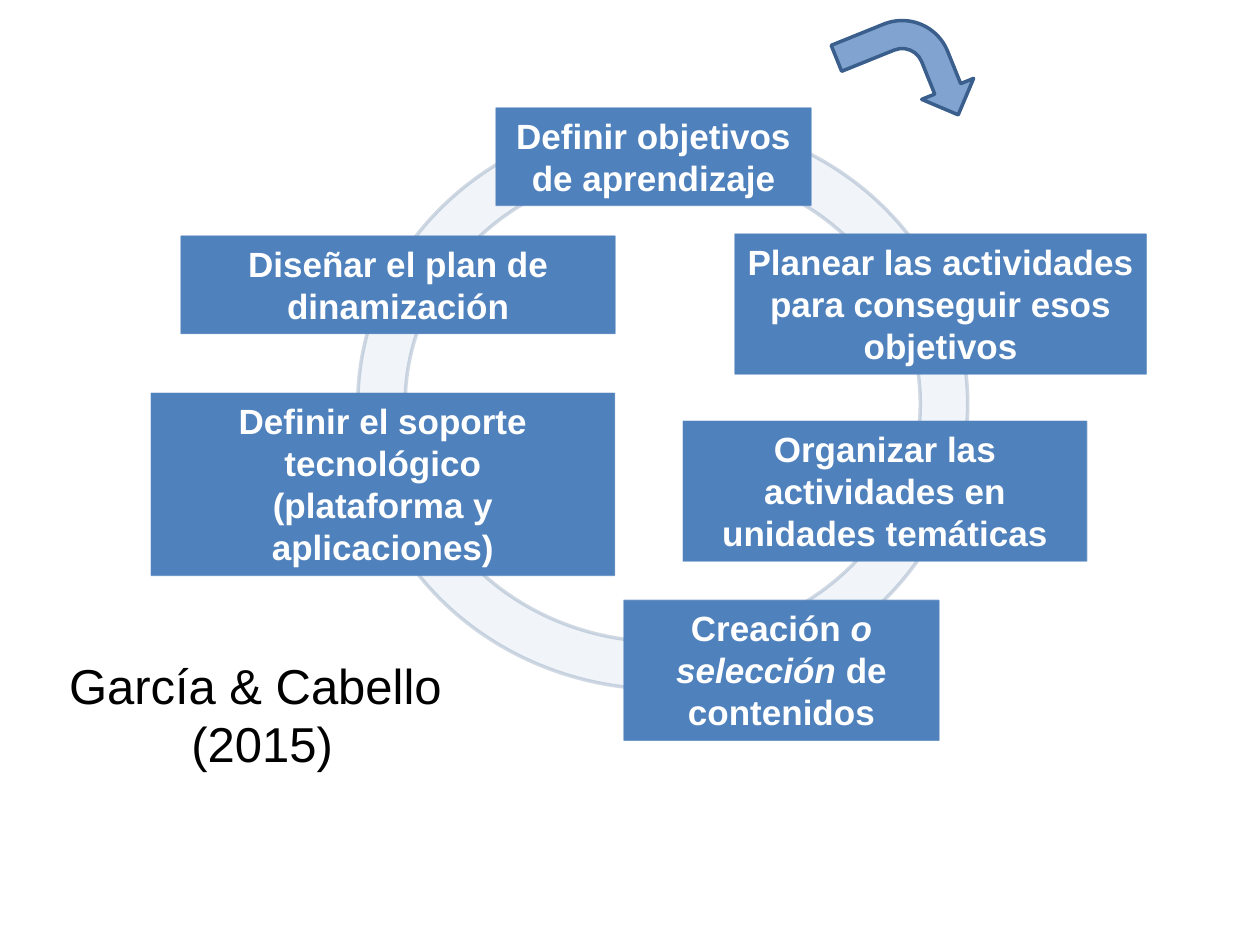
"""Build a slide showing the cycle of steps for designing a course."""
from lxml import etree
from pptx import Presentation
from pptx.dml import color
from pptx.enum import shapes, text
from pptx.oxml import ns
from pptx.util import Pt

BLUE = color.RGBColor(0x4F, 0x81, 0xBD)
NAVY = color.RGBColor(0x3A, 0x5F, 0x8C)
WHITE = color.RGBColor(0xFF, 0xFF, 0xFF)
BLACK = color.RGBColor(0, 0, 0)


def add_filled_shape(kind, bounds, outline, width, fill_alpha, line_alpha):
    shape = slide.shapes.add_shape(kind, *[Pt(length) for length in bounds])
    shape.shadow.inherit = False
    shape.fill.solid()
    shape.fill.fore_color.rgb = BLUE
    shape.line.color.rgb = outline
    shape.line.width = Pt(width)
    colours = shape._element.spPr.iter(ns.qn("a:srgbClr"))
    for colour, alpha in zip(list(colours), (fill_alpha, line_alpha)):
        if alpha < 100:
            etree.SubElement(colour, ns.qn("a:alpha")).set("val", str(alpha * 1000))
    return shape


def write_text(shape, paragraphs, size, colour, bold, wrap):
    frame = shape.text_frame
    frame.word_wrap = wrap
    frame.auto_size = text.MSO_AUTO_SIZE.SHAPE_TO_FIT_TEXT
    for index, runs in enumerate(paragraphs):
        paragraph = frame.add_paragraph() if index else frame.paragraphs[0]
        paragraph.alignment = text.PP_ALIGN.CENTER
        for words, italic in runs:
            run = paragraph.add_run()
            run.text = words
            run.font.name = "Arial"
            run.font.size = Pt(size)
            run.font.bold = bold
            run.font.italic = italic
            run.font.color.rgb = colour


presentation = Presentation()
presentation.slide_width = Pt(720)
presentation.slide_height = Pt(540)
slide = presentation.slides.add_slide(presentation.slide_layouts[6])

ring = add_filled_shape(shapes.MSO_SHAPE.DONUT, (204.5, 67.7, 348.5, 326.2), NAVY, 2, 8, 23)
ring.adjustments[0] = 0.083

steps = [
    ((103.5, 134.9, 248, 55.7), [[("Diseñar el plan de dinamización", False)]]),
    ((283.5, 61.7, 180, 55.7), [[("Definir objetivos de aprendizaje", False)]]),
    ((420, 133.8, 235, 80),
     [[("Planear las actividades para conseguir esos objetivos", False)]]),
    ((390.4, 240.7, 230.6, 80),
     [[("Organizar las actividades en unidades temáticas", False)]]),
    ((356.6, 343.1, 180, 80),
     [[("Creación ", False), ("o selección ", True), ("de contenidos", False)]]),
    ((86.4, 224.7, 264.8, 104.2),
     [[("Definir el soporte tecnológico", False)],
      [("(plataforma y aplicaciones)", False)]]),
]
for bounds, paragraphs in steps:
    step = add_filled_shape(shapes.MSO_SHAPE.RECTANGLE, bounds, BLUE, 0.75, 100, 69)
    step.text_frame.vertical_anchor = text.MSO_ANCHOR.TOP
    write_text(step, paragraphs, 20, WHITE, True, True)

citation = slide.shapes.add_textbox(Pt(31), Pt(370.8), Pt(237.6), Pt(75))
write_text(citation, [[("García & Cabello ", False)], [("(2015)", False)]],
           28, BLACK, False, False)

arrow = add_filled_shape(shapes.MSO_SHAPE.BENT_ARROW, (486.7, 8.6, 64, 68.4), NAVY, 2, 72, 100)
arrow.rotation = 68

presentation.save("out.pptx")
